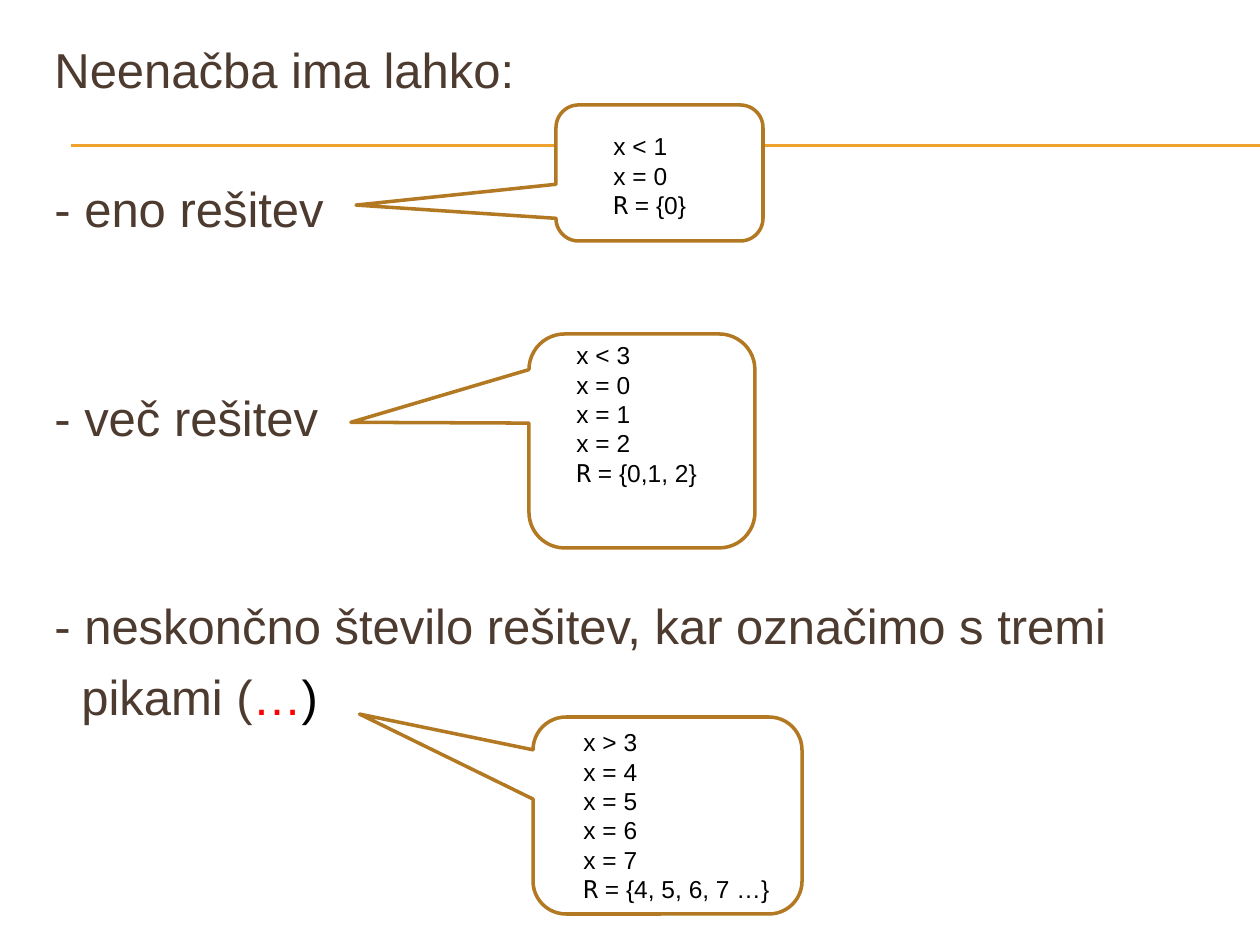
from lxml import etree
from pptx import Presentation
from pptx.dml.color import RGBColor
from pptx.enum.shapes import MSO_CONNECTOR, MSO_SHAPE
from pptx.oxml.ns import qn
from pptx.util import Pt

STRAIGHT = MSO_CONNECTOR.STRAIGHT
CALLOUT = MSO_SHAPE.ROUNDED_RECTANGULAR_CALLOUT
SCALE = 914400 / 126
COLOURS = {
    "brown": "4E3B30",
    "black": "000000",
    "red": "FF0000",
    "white": "FFFFFF",
    "rule": "F0A22E",
    "border": "B27822",
}
SANS, MONO = "Arial", "DejaVu Sans Mono"


def px(length):
    return round(length * SCALE)


def colour(name):
    return RGBColor.from_string(COLOURS[name])


class SlideBuilder:
    def __init__(self, deck):
        self.page = deck.slides.add_slide(deck.slide_layouts[6])

    def rule(self, left, right, y):
        line = self.page.shapes.add_connector(STRAIGHT, px(left), px(y), px(right), px(y))
        line.line.color.rgb = colour("rule")
        line.line.width = Pt(0.75)
        etree.SubElement(line._element.spPr, qn("a:effectLst"))

    def callout(self, bounds, adjustments):
        shape = self.page.shapes.add_shape(CALLOUT, *map(px, bounds))
        shape.shadow.inherit = False
        shape.fill.solid()
        shape.fill.fore_color.rgb = colour("white")
        shape.line.color.rgb = colour("border")
        shape.line.width = Pt(2)
        for index, value in enumerate(adjustments):
            shape.adjustments[index] = value

    def text(self, bounds, size, paragraphs):
        box = self.page.shapes.add_textbox(*map(px, bounds))
        frame = box.text_frame
        frame.word_wrap = True
        for index, (spans, before, indent) in enumerate(paragraphs):
            para = frame.paragraphs[0] if index == 0 else frame.add_paragraph()
            para.space_before = Pt(before)
            if indent:
                para._p.get_or_add_pPr().set("marL", str(px(indent)))
            for words, font, tint in spans:
                span = para.add_run()
                span.text = words
                for name, value in {"name": font, "size": Pt(size)}.items():
                    setattr(span.font, name, value)
                span.font.color.rgb = colour(tint)

    def example(self, bounds, adjustments, text_bounds, steps, solution):
        self.callout(bounds, adjustments)
        paragraphs = [([(step, SANS, "black")], 0, 0) for step in steps]
        result = [("R", MONO, "black"), (f" = {solution}", SANS, "black")]
        self.text(text_bounds, 14, paragraphs + [(result, 0, 0)])


def main():
    deck = Presentation()
    deck.slide_width, deck.slide_height = px(1260), px(945)
    slide = SlideBuilder(deck)

    for y in (145, 146):
        slide.rule(71, 1260, y)

    gap, line = 7, 39.25
    outline = [
        ("Neenačba ima lahko:", 0),
        ("- eno rešitev", gap + line),
        ("- več rešitev", gap + 2 * line),
        ("- neskončno število rešitev, kar označimo s tremi", gap + 2 * line),
    ]
    body = [([(words, SANS, "brown")], before, 0) for words, before in outline]
    ending = [("pikami (", SANS, "brown"), ("…", SANS, "red"), (")", SANS, "black")]
    slide.text((42, 33, 1218, 804), 28, body + [(ending, gap, 27)])

    examples = [
        ((556, 105, 207, 136), (-1.466, 0.236, 0.167), (601, 125, 118, 170),
         ["x < 1", "x = 0"], "{0}"),
        ((529, 334, 226, 214), (-1.288, -0.087, 0.167), (564, 334, 266, 318),
         ["x < 3", "x = 0", "x = 1", "x = 2"], "{0,1, 2}"),
        ((533, 717, 269, 197), (-1.145, -0.515, 0.167), (571, 721, 227, 348),
         ["x > 3", "x = 4", "x = 5", "x = 6", "x = 7"], "{4, 5, 6, 7 …}"),
    ]
    for example in examples:
        slide.example(*example)

    deck.save("out.pptx")


if __name__ == "__main__":
    main()
